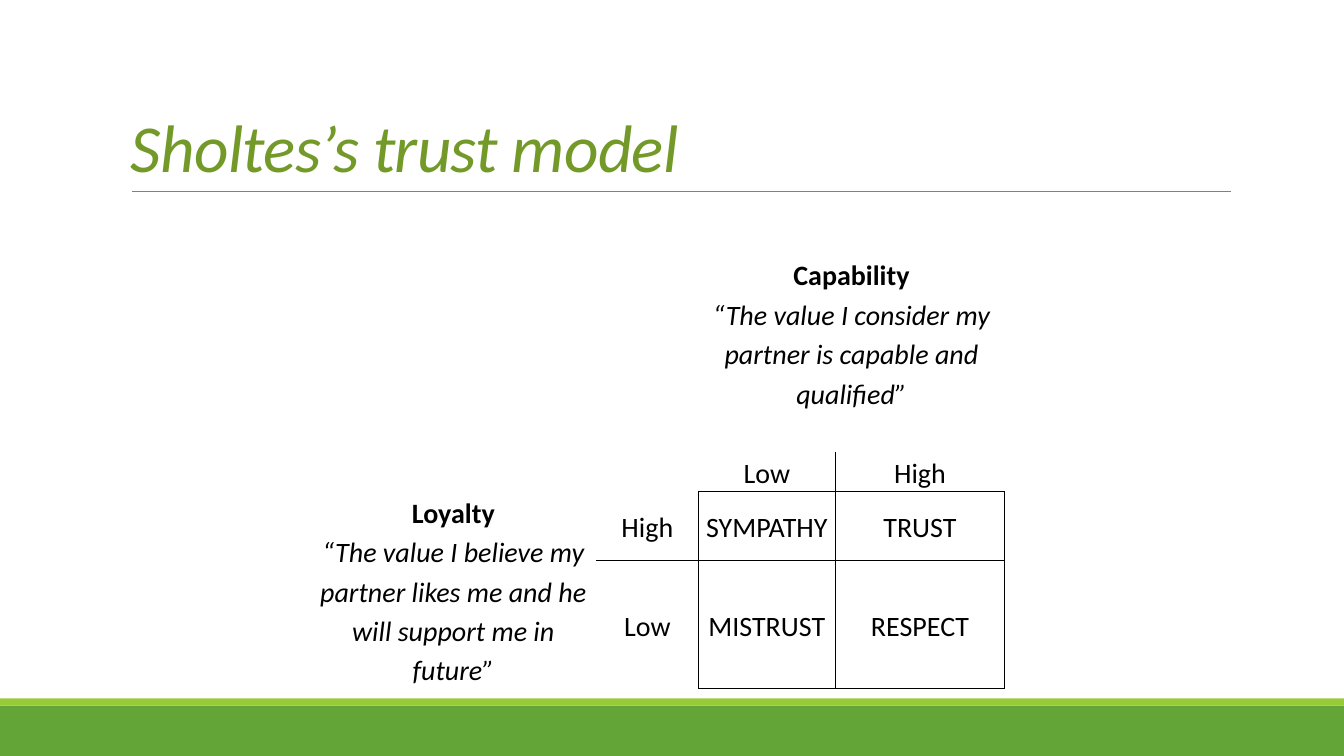
import pptx
import pptx.dml.color
import pptx.enum.shapes
import pptx.enum.text
import pptx.oxml.ns
import pptx.util
from lxml import etree

Cm, Pt = pptx.util.Cm, pptx.util.Pt
ALIGN = pptx.enum.text.PP_ALIGN
ANCHOR = pptx.enum.text.MSO_ANCHOR
SLIDE_WIDTH, SLIDE_HEIGHT = 33.87, 19.05

COLUMN_WIDTHS = [7.21, 2.57, 3.45, 4.27]
ROW_HEIGHTS = [3.98, 1.0, 1.0, 1.74, 3.23]
MERGES = [((0, 2), (0, 3)), ((1, 2), (1, 3)), ((3, 0), (4, 0))]
HEADINGS = {
    (0, 2): ["Capability", "“The value I consider my",
             "partner is capable and qualified”"],
    (3, 0): ["Loyalty", "“The value I believe my partner likes me "
             "and he will support me in future”"],
}
LABELS = {
    (2, 2): "Low", (2, 3): "High",
    (3, 1): "High", (3, 2): "SYMPATHY", (3, 3): "TRUST",
    (4, 1): "Low", (4, 2): "MISTRUST", (4, 3): "RESPECT",
}
# Ruled sides of each cell: L(eft), R(ight), T(op), B(ottom)
RULED_SIDES = {
    (2, 2): "RB", (2, 3): "LB", (3, 1): "RB", (4, 1): "TR",
    (3, 2): "LRTB", (3, 3): "LRTB", (4, 2): "LRTB", (4, 3): "LRTB",
}


def color(hex_string):
    return pptx.dml.color.RGBColor.from_string(hex_string)


def apply_format(target, values):
    for name, value in values.items():
        setattr(target, name, value)


def add_text(paragraph, text, hex_string, **font_values):
    run = paragraph.add_run()
    run.text = text
    apply_format(run.font, {"name": "Calibri", **font_values})
    run.font.color.rgb = color(hex_string)
    return run


def add_footer_bands(slide, left, top, width, height):
    stripe = 0.18
    for band_top, band_height, fill in [
        (top + stripe, height - stripe, "63A537"),
        (top, stripe, "99CB38"),
    ]:
        band = slide.shapes.add_shape(
            pptx.enum.shapes.MSO_SHAPE.RECTANGLE,
            Cm(left), Cm(band_top), Cm(width), Cm(band_height))
        band.shadow.inherit = False
        band.fill.solid()
        band.fill.fore_color.rgb = color(fill)
        band.line.fill.background()


def add_title(slide, left, top, width, height):
    # Rule under the title
    bottom = Cm(top + height)
    rule = slide.shapes.add_connector(
        pptx.enum.shapes.MSO_CONNECTOR.STRAIGHT,
        Cm(left + 0.27), bottom, Cm(left + width + 0.03), bottom)
    rule.line.color.rgb = color("808080")
    rule.line.width = Pt(0.5)
    properties = rule.element.find(pptx.oxml.ns.qn("p:spPr"))
    etree.SubElement(properties, pptx.oxml.ns.qn("a:effectLst"))

    # Title text
    title = slide.shapes.add_textbox(Cm(left), Cm(top), Cm(width), Cm(height))
    apply_format(title.text_frame,
                 {"word_wrap": True, "vertical_anchor": ANCHOR.BOTTOM})
    paragraph = title.text_frame.paragraphs[0]
    paragraph.line_spacing = 0.85
    run = add_text(paragraph, "Sholtes’s trust model", "739A28",
                   size=Pt(48), italic=True)
    run.font._element.set("spc", "-50")


def rule_cell(cell, ruled_sides):
    properties = cell._tc.get_or_add_tcPr()
    for side in "LRTB":
        border = etree.SubElement(
            properties, pptx.oxml.ns.qn(f"a:ln{side}"), w=str(Pt(1)))
        if side in ruled_sides:
            fill = etree.SubElement(border, pptx.oxml.ns.qn("a:solidFill"))
            etree.SubElement(fill, pptx.oxml.ns.qn("a:srgbClr"), val="000000")
        else:
            etree.SubElement(border, pptx.oxml.ns.qn("a:noFill"))


def fill_cell(cell, position):
    anchor = ANCHOR.MIDDLE if position[0] >= 3 else ANCHOR.TOP
    apply_format(cell, {
        "margin_left": Cm(0.18), "margin_right": Cm(0.18),
        "margin_top": 0, "margin_bottom": 0, "vertical_anchor": anchor})
    rule_cell(cell, RULED_SIDES.get(position, ""))
    cell.fill.background()

    is_heading = position in HEADINGS
    lines = HEADINGS.get(position) or [LABELS.get(position, "")]
    for index, line in enumerate(lines):
        paragraphs = cell.text_frame
        paragraph = (paragraphs.add_paragraph() if index
                     else paragraphs.paragraphs[0])
        apply_format(paragraph,
                     {"alignment": ALIGN.CENTER, "line_spacing": 1.15})
        if line:
            add_text(paragraph, line, "000000", size=Pt(20),
                     bold=is_heading and index == 0,
                     italic=is_heading and index > 0)


def add_trust_matrix(slide, left, top):
    matrix = slide.shapes.add_table(
        len(ROW_HEIGHTS), len(COLUMN_WIDTHS), Cm(left), Cm(top),
        Cm(sum(COLUMN_WIDTHS)), Cm(sum(ROW_HEIGHTS))).table
    apply_format(matrix, {"first_row": False, "horz_banding": False})
    for column, width in zip(matrix.columns, COLUMN_WIDTHS):
        column.width = Cm(width)
    for row, height in zip(matrix.rows, ROW_HEIGHTS):
        row.height = Cm(height)
    for first, last in MERGES:
        matrix.cell(*first).merge(matrix.cell(*last))
    for row in range(len(ROW_HEIGHTS)):
        for column in range(len(COLUMN_WIDTHS)):
            fill_cell(matrix.cell(row, column), (row, column))


def main():
    deck = pptx.Presentation()
    apply_format(deck, {"slide_width": Cm(SLIDE_WIDTH),
                        "slide_height": Cm(SLIDE_HEIGHT)})
    slide = deck.slides.add_slide(deck.slide_layouts[6])
    add_footer_bands(slide, 0, 17.6, SLIDE_WIDTH, SLIDE_HEIGHT - 17.6)
    add_title(slide, 3.05, 0.79, 27.94, 4.03)
    add_trust_matrix(slide, 7.82, 6.4)
    deck.save("out.pptx")


if __name__ == "__main__":
    main()
